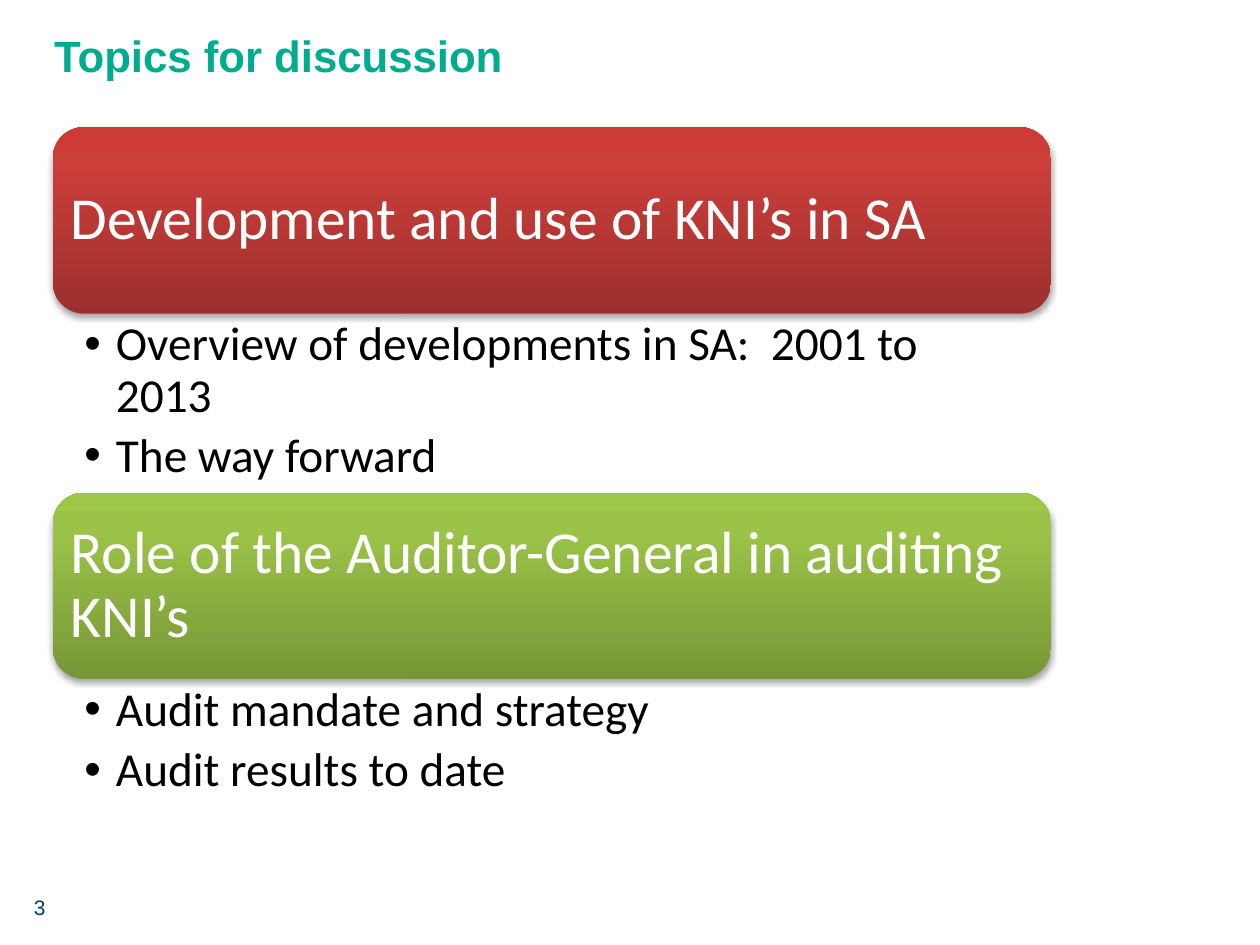
from collections import namedtuple

from lxml import etree
from pptx import Presentation
from pptx import util as u
from pptx.dml.color import RGBColor
from pptx.enum import shapes, text
from pptx.oxml import parse_xml
from pptx.oxml.ns import nsdecls, qn

Box = namedtuple("Box", "left top width height")
SLIDE_WIDTH, SLIDE_HEIGHT = 10, 7.5
LIST_LEFT, LIST_WIDTH = 0.42, 7.92
BANNER_HEIGHT = 1.48
SECTIONS = [
    ("Development and use of KNI’s in SA", ("9C2F2D", "CB3E3A", "CE3B37"),
     ["Overview of developments in SA:  2001 to 2013", "The way forward"], 1.42),
    ("Role of the Auditor-General in auditing KNI’s", ("779737", "9BC348", "9DC746"),
     ["Audit mandate and strategy", "Audit results to date"], 1.02),
]


def colour(value):
    return RGBColor.from_string(value)


def inches(box):
    return [u.Inches(length) for length in box]


def place(shape, box):
    shape.left, shape.top, shape.width, shape.height = inches(box)


def set_frame(frame, anchor, horizontal, vertical):
    frame.word_wrap = True
    frame.auto_size = text.MSO_AUTO_SIZE.NONE
    frame.vertical_anchor = anchor
    frame.margin_left = frame.margin_right = u.Inches(horizontal)
    frame.margin_top = frame.margin_bottom = u.Inches(vertical)


def style(paragraph, size, hex_colour, name="Calibri", bold=False):
    paragraph.alignment = text.PP_ALIGN.LEFT
    paragraph.font.size = u.Pt(size)
    paragraph.font.name = name
    paragraph.font.bold = bold
    paragraph.font.color.rgb = colour(hex_colour)


def add_gradient_and_shadow(shape, stops):
    shape.line.fill.background()
    properties = shape.element.spPr
    stop_list = "".join(
        f'<a:gs pos="{position}"><a:srgbClr val="{value}"/></a:gs>'
        for position, value in zip((0, 80000, 100000), stops))
    gradient = parse_xml(
        f'<a:gradFill {nsdecls("a")} rotWithShape="1"><a:gsLst>{stop_list}</a:gsLst>'
        '<a:lin ang="16200000" scaled="0"/></a:gradFill>')
    properties.find(qn("a:prstGeom")).addnext(gradient)
    properties.append(parse_xml(
        f'<a:effectLst {nsdecls("a")}><a:outerShdw blurRad="{u.Pt(3.1)}" '
        f'dist="{u.Pt(1.8)}" dir="5400000" rotWithShape="0"><a:srgbClr val="000000">'
        '<a:alpha val="35000"/></a:srgbClr></a:outerShdw></a:effectLst>'))


def add_banner(slide, box, heading, stops):
    banner = slide.shapes.add_shape(shapes.MSO_SHAPE.ROUNDED_RECTANGLE, *inches(box))
    add_gradient_and_shadow(banner, stops)
    set_frame(banner.text_frame, text.MSO_ANCHOR.MIDDLE, 0.07, 0.07)
    paragraph = banner.text_frame.paragraphs[0]
    paragraph.text = heading
    paragraph.line_spacing = 0.9
    style(paragraph, 34, "FFFFFF")


def fill_list(placeholder, box, items):
    place(placeholder, box)
    frame = placeholder.text_frame
    set_frame(frame, text.MSO_ANCHOR.TOP, 0.25, 0.05)
    frame.text = "\n".join(items)
    for paragraph in frame.paragraphs:
        paragraph.level = 1
        properties = paragraph._p.get_or_add_pPr()
        properties.set("marL", str(u.Inches(0.25)))
        properties.set("indent", str(-u.Inches(0.25)))
        etree.SubElement(properties, qn("a:buFont"), typeface="Arial")
        etree.SubElement(properties, qn("a:buChar"), char="•")
        paragraph.line_spacing = 0.9
        paragraph.space_before = u.Pt(0)
        paragraph.space_after = u.Pt(5.4)
        style(paragraph, 27, "000000")


def fill_title(title, box, heading):
    place(title, box)
    set_frame(title.text_frame, text.MSO_ANCHOR.MIDDLE, 0.1, 0.05)
    title.text_frame.text = heading
    style(title.text_frame.paragraphs[0], 25, "00AC8F", "Arial", True)


def add_page_number(slide, box, number):
    frame = slide.shapes.add_textbox(*inches(box)).text_frame
    set_frame(frame, text.MSO_ANCHOR.TOP, 0.1, 0.05)
    frame.text = number
    style(frame.paragraphs[0], 12, "003B79", "Arial")


def main():
    presentation = Presentation()
    presentation.slide_width = u.Inches(SLIDE_WIDTH)
    presentation.slide_height = u.Inches(SLIDE_HEIGHT)
    slide = presentation.slides.add_slide(presentation.slide_layouts.get_by_name("Two Content"))
    title, *lists = slide.placeholders
    add_page_number(slide, Box(0.17, 7.05, 0.75, 0.3), "3")
    fill_title(title, Box(0.33, 0.17, SLIDE_WIDTH / 1.2, 0.53), "Topics for discussion")
    top = 1.01
    for placeholder, (heading, stops, items, list_height) in zip(lists, SECTIONS):
        add_banner(slide, Box(LIST_LEFT, top, LIST_WIDTH, BANNER_HEIGHT), heading, stops)
        top += BANNER_HEIGHT
        fill_list(placeholder, Box(LIST_LEFT, top, LIST_WIDTH, list_height), items)
        top += list_height
    presentation.save("out.pptx")


if __name__ == "__main__":
    main()
